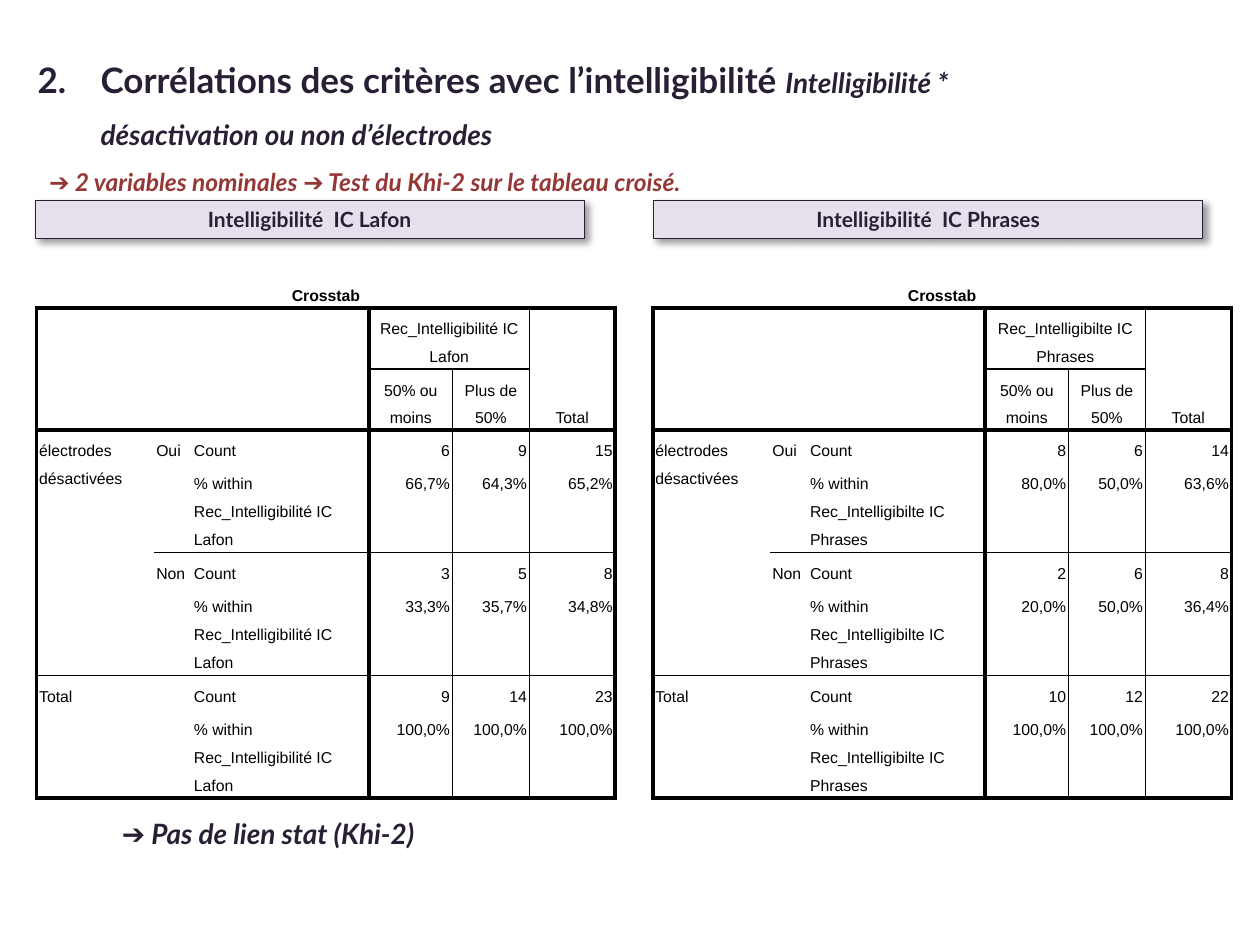
from lxml import etree
from pptx import Presentation
from pptx.dml.color import RGBColor
from pptx.enum.shapes import MSO_SHAPE
from pptx.enum.text import MSO_ANCHOR, PP_ALIGN
from pptx.oxml.ns import qn
from pptx.util import Cm, Pt

LEFT, CENTER, RIGHT = PP_ALIGN.LEFT, PP_ALIGN.CENTER, PP_ALIGN.RIGHT
TOP, MIDDLE, BOTTOM = MSO_ANCHOR.TOP, MSO_ANCHOR.MIDDLE, MSO_ANCHOR.BOTTOM
RECTANGLE = MSO_SHAPE.RECTANGLE

INK = RGBColor(0x29, 0x1F, 0x35)
RED = RGBColor(0x95, 0x37, 0x35)
LILAC = RGBColor(0xE6, 0xE0, 0xEC)
BLACK = RGBColor(0x00, 0x00, 0x00)
WHITE = RGBColor(0xFF, 0xFF, 0xFF)

TITLE = "2.\tCorrélations des critères avec l’intelligibilité "
SUBTITLE = "Intelligibilité * désactivation ou non d’électrodes"
METHOD = "➔ 2 variables nominales ➔ Test du Khi-2 sur le tableau croisé."
CONCLUSION = "➔ Pas de lien stat (Khi-2)"

PANELS = [
    {
        "heading": "Intelligibilité  IC Lafon",
        "variable": "Rec_Intelligibilité IC Lafon",
        "bar_left": 0.71,
        "table_left": 0.74,
        "values": [
            ("6", "9", "15"), ("66,7%", "64,3%", "65,2%"),
            ("3", "5", "8"), ("33,3%", "35,7%", "34,8%"),
            ("9", "14", "23"), ("100,0%", "100,0%", "100,0%"),
        ],
    },
    {
        "heading": "Intelligibilité  IC Phrases",
        "variable": "Rec_Intelligibilte IC Phrases",
        "bar_left": 13.18,
        "table_left": 13.16,
        "values": [
            ("8", "6", "14"), ("80,0%", "50,0%", "63,6%"),
            ("2", "6", "8"), ("20,0%", "50,0%", "36,4%"),
            ("10", "12", "22"), ("100,0%", "100,0%", "100,0%"),
        ],
    },
]
ROW_LABELS = {
    (3, 0): "électrodes désactivées",
    (3, 1): "Oui",
    (5, 1): "Non",
    (7, 0): "Total",
}
MERGES = [
    ((0, 0), (0, 5)), ((1, 3), (1, 4)), ((1, 5), (2, 5)),
    ((3, 0), (6, 0)), ((3, 1), (4, 1)), ((5, 1), (6, 1)), ((7, 0), (8, 1)),
]
COLUMN_WIDTHS = [2.36, 0.76, 3.58, 1.68, 1.55, 1.73]
ROW_HEIGHTS = [0.66, 1.23, 1.23] + [0.66, 1.81] * 3
THICK, THIN = 2.25, 1
HORIZONTAL_RULES = {
    1: (THICK, range(6)),
    2: (THIN, range(3, 5)),
    3: (THICK, range(6)),
    5: (THIN, range(1, 6)),
    7: (THIN, range(6)),
    9: (THICK, range(6)),
}
VERTICAL_RULES = {
    0: (THICK, range(1, 9)),
    3: (THICK, range(1, 9)),
    4: (THIN, range(2, 9)),
    5: (THIN, range(1, 9)),
    6: (THICK, range(1, 9)),
}


def write(paragraph, text, size=9, font="Arial", color=BLACK, bold=False,
          italic=False, align=LEFT, spacing=None):
    run = paragraph.add_run()
    run.text = text
    run.font.size = Pt(size)
    run.font.name = font
    run.font.color.rgb = color
    run.font.bold = bold
    run.font.italic = italic
    paragraph.alignment = align
    paragraph.line_spacing = spacing


def add_text_box(slide, left, top, width, height):
    box = slide.shapes.add_textbox(Cm(left), Cm(top), Cm(width), Cm(height))
    box.text_frame.word_wrap = True
    return box.text_frame.paragraphs[0]


def add_shadow(shape):
    effects = shape._element.spPr.find(qn("a:effectLst"))
    shadow = etree.SubElement(effects, qn("a:outerShdw"), blurRad=str(Pt(4)),
                              dist=str(Pt(3)), dir="2700000", algn="tl", rotWithShape="0")
    color = etree.SubElement(shadow, qn("a:srgbClr"), val=str(BLACK))
    etree.SubElement(color, qn("a:alpha"), val="40000")


def add_heading(slide, panel):
    bar = slide.shapes.add_shape(RECTANGLE, Cm(panel["bar_left"]), Cm(4.04), Cm(11.07), Cm(0.77))
    bar.shadow.inherit = False
    add_shadow(bar)
    bar.fill.solid()
    bar.fill.fore_color.rgb = LILAC
    bar.line.color.rgb = INK
    bar.line.width = Pt(0.75)
    bar.text_frame.word_wrap = True
    write(bar.text_frame.paragraphs[0], panel["heading"], size=12, font="Lato",
          color=INK, bold=True, align=CENTER)


def rule_width(rules, edge, position):
    width, positions = rules.get(edge, (0, ()))
    return width if position in positions else 0


def set_borders(cell, row, column):
    bottom = row + (cell.span_height if cell.is_merge_origin else 1)
    right = column + (cell.span_width if cell.is_merge_origin else 1)
    borders = {
        "a:lnL": rule_width(VERTICAL_RULES, column, row),
        "a:lnR": rule_width(VERTICAL_RULES, right, row),
        "a:lnT": rule_width(HORIZONTAL_RULES, row, column),
        "a:lnB": rule_width(HORIZONTAL_RULES, bottom, column),
    }
    properties = cell._tc.get_or_add_tcPr()
    for tag, width in borders.items():
        line = etree.SubElement(properties, qn(tag), w=str(Pt(width)))
        if width:
            fill = etree.SubElement(line, qn("a:solidFill"))
            etree.SubElement(fill, qn("a:srgbClr"), val=str(BLACK))
        else:
            etree.SubElement(line, qn("a:noFill"))


def crosstab_texts(panel):
    texts = {
        (0, 0): "Crosstab",
        (1, 3): panel["variable"],
        (1, 5): "Total",
        (2, 3): "50% ou moins",
        (2, 4): "Plus de 50%",
        **ROW_LABELS,
    }
    for row, values in enumerate(panel["values"], start=3):
        texts[row, 2] = "Count" if row % 2 else f"% within {panel['variable']}"
        for column, value in enumerate(values, start=3):
            texts[row, column] = value
    return texts


def add_crosstab(slide, panel):
    table = slide.shapes.add_table(
        len(ROW_HEIGHTS), len(COLUMN_WIDTHS), Cm(panel["table_left"]), Cm(5.54),
        Cm(sum(COLUMN_WIDTHS)), Cm(sum(ROW_HEIGHTS))).table
    table.first_row = table.horz_banding = False
    for column, width in zip(table.columns, COLUMN_WIDTHS):
        column.width = Cm(width)
    for row, height in zip(table.rows, ROW_HEIGHTS):
        row.height = Cm(height)
    for first, last in MERGES:
        table.cell(*first).merge(table.cell(*last))
    texts = crosstab_texts(panel)
    for row in range(len(ROW_HEIGHTS)):
        for column in range(len(COLUMN_WIDTHS)):
            cell = table.cell(row, column)
            set_borders(cell, row, column)
            cell.fill.solid()
            cell.fill.fore_color.rgb = WHITE
            cell.margin_left = cell.margin_right = Cm(0.05)
            cell.margin_top = cell.margin_bottom = Cm(0.05)
            cell.vertical_anchor = MIDDLE if row == 0 else BOTTOM if row < 3 else TOP
            if (row, column) in texts:
                align = CENTER if row < 3 else RIGHT if column > 2 else LEFT
                write(cell.text_frame.paragraphs[0], texts[row, column],
                      bold=row == 0, align=align, spacing=Pt(16))


def main():
    presentation = Presentation()
    presentation.slide_width, presentation.slide_height = Cm(25.4), Cm(19.05)
    slide = presentation.slides.add_slide(presentation.slide_layouts[6])
    title = add_text_box(slide, 0.51, 0.64, 19.1, 3.84)
    properties = title._p.get_or_add_pPr()
    properties.set("marL", str(Cm(1.27)))
    properties.set("indent", str(-Cm(1.27)))
    write(title, TITLE, size=20, font="Lato", color=INK, bold=True, spacing=1.5)
    write(title, SUBTITLE, size=16, font="Lato", color=INK, bold=True, italic=True, spacing=1.5)
    for panel in PANELS:
        add_heading(slide, panel)
    write(add_text_box(slide, 2.21, 16.33, 7.9, 0.94), CONCLUSION, size=16, font="Lato",
          color=INK, bold=True, italic=True)
    write(add_text_box(slide, 0.74, 3.25, 22.43, 0.86), METHOD, size=14, font="Lato",
          color=RED, bold=True, italic=True)
    for panel in PANELS:
        add_crosstab(slide, panel)
    presentation.save("out.pptx")


if __name__ == "__main__":
    main()
